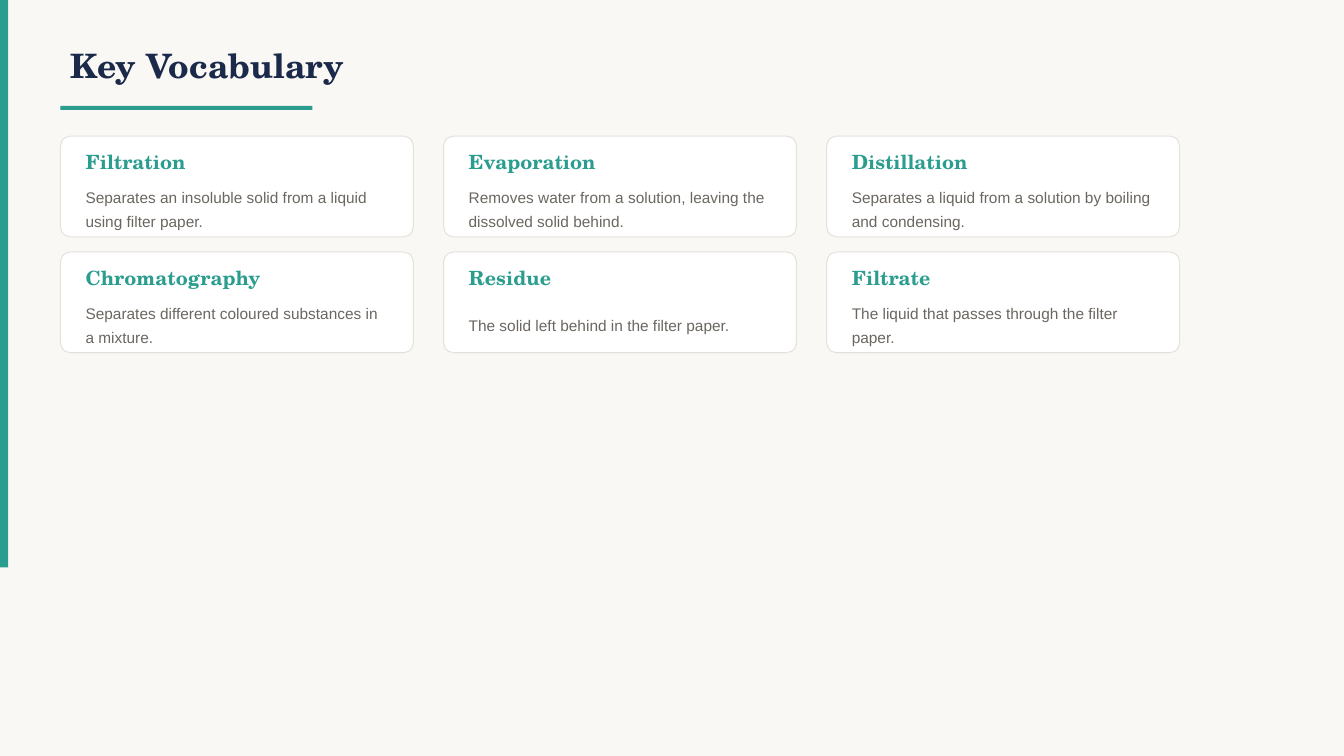
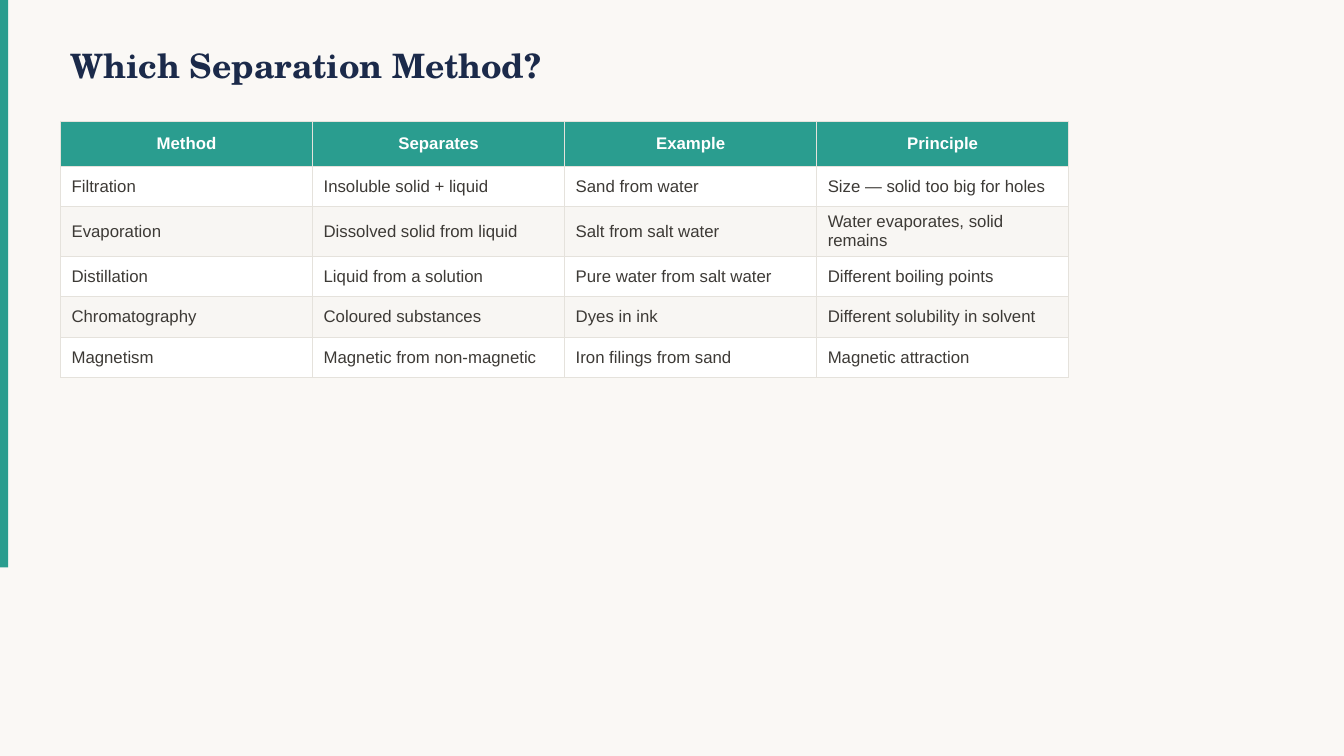
"""Build two science slides: a vocabulary card grid and a separation methods table."""
from pptx import Presentation
from pptx.dml.color import RGBColor
from pptx.enum.shapes import MSO_SHAPE as SHAPE
from pptx.enum.text import MSO_ANCHOR as ANCHOR, MSO_AUTO_SIZE as AUTOSIZE, PP_ALIGN as ALIGN
from pptx.oxml.ns import qn
from pptx.util import Pt
from lxml.etree import SubElement

VOCABULARY = [
    ("Filtration", "Separates an insoluble solid from a liquid using filter paper."),
    ("Evaporation", "Removes water from a solution, leaving the dissolved solid behind."),
    ("Distillation", "Separates a liquid from a solution by boiling and condensing."),
    ("Chromatography", "Separates different coloured substances in a mixture."),
    ("Residue", "The solid left behind in the filter paper."),
    ("Filtrate", "The liquid that passes through the filter paper."),
]
METHODS = [
    ("Method", "Separates", "Example", "Principle"),
    ("Filtration", "Insoluble solid + liquid", "Sand from water", "Size — solid too big for holes"),
    ("Evaporation", "Dissolved solid from liquid", "Salt from salt water",
     "Water evaporates, solid remains"),
    ("Distillation", "Liquid from a solution", "Pure water from salt water",
     "Different boiling points"),
    ("Chromatography", "Coloured substances", "Dyes in ink", "Different solubility in solvent"),
    ("Magnetism", "Magnetic from non-magnetic", "Iron filings from sand", "Magnetic attraction"),
]

COLORS = {
    "paper": "FAF8F5", "accent": "2A9D8F", "title": "1B2A4A", "card": "FFFFFF",
    "border": "E5E2DC", "muted": "6B6660", "body": "3D3A36", "band": "F8F6F3",
}
SERIF, SANS = "TeX Gyre Schola", "Arial"
PX = 9144
MARGIN = 60
CARD_COLUMNS, CARD_TOP, CARD_WIDTH, CARD_HEIGHT = 3, 135, 350, 100
GAP_X, GAP_Y = 30, 15
TABLE_TOP, COLUMN_WIDTH, HEADER_HEIGHT, ROW_HEIGHT = 120, 250, 45, 40


def px(*lengths):
    return [length * PX for length in lengths]


def rgb(name):
    return RGBColor.from_string(COLORS[name])


def paint(target, name):
    target.fill.solid()
    target.fill.fore_color.rgb = rgb(name)


def style(paragraph, face, size, color, bold=False, align=ALIGN.LEFT):
    paragraph.alignment = align
    font = paragraph.font
    font.name, font.size, font.bold = face, Pt(size), bold
    font.color.rgb = rgb(color)


def add_block(slide, box, color, preset=SHAPE.RECTANGLE):
    block = slide.shapes.add_shape(preset, *px(*box))
    block.shadow.inherit = False
    paint(block, color)
    block.line.fill.background()
    return block


def add_text(slide, box, text, *look):
    frame = slide.shapes.add_textbox(*px(*box)).text_frame
    frame.word_wrap = True
    frame.vertical_anchor = ANCHOR.MIDDLE
    frame.text = text
    paragraph = frame.paragraphs[0]
    style(paragraph, *look)
    return paragraph


def add_titled_slide(deck, heading):
    slide = deck.slides.add_slide(deck.slide_layouts.get_by_name("Title Only"))
    title = slide.shapes.title
    title.left, title.top, title.width, title.height = px(MARGIN, 30, 1000, 70)
    title.text = heading
    title.text_frame.auto_size = AUTOSIZE.NONE
    title.text_frame.vertical_anchor = ANCHOR.MIDDLE
    style(title.text_frame.paragraphs[0], SERIF, 24, "title", True)
    add_block(slide, (0, 0, 8, 563), "accent")
    return slide


def add_card(slide, left, top, term, meaning):
    card = add_block(slide, (left, top, CARD_WIDTH, CARD_HEIGHT), "card", SHAPE.ROUNDED_RECTANGLE)
    card.adjustments[0] = 0.1
    card.line.color.rgb = rgb("border")
    card.line.width = Pt(0.75)
    text_left, text_width = left + 15, CARD_WIDTH - 30
    add_text(slide, (text_left, top + 8, text_width, 35), term, SERIF, 14, "accent", True)
    definition = add_text(slide, (text_left, top + 45, text_width, 50), meaning, SANS, 11, "muted")
    definition.line_spacing = 1.3


def add_borders(cell):
    properties = cell._tc.get_or_add_tcPr()
    for side in ("a:lnL", "a:lnR", "a:lnT", "a:lnB"):
        edge = SubElement(properties, qn(side), w=str(Pt(0.5)))
        SubElement(SubElement(edge, qn("a:solidFill")), qn("a:srgbClr"), val=COLORS["border"])


def fill_cell(cell, text, background, *look):
    add_borders(cell)
    paint(cell, background)
    cell.margin_left = cell.margin_right = 11 * PX
    cell.margin_top = cell.margin_bottom = 6 * PX
    cell.vertical_anchor = ANCHOR.MIDDLE
    cell.text = text
    style(cell.text_frame.paragraphs[0], SANS, 12, *look)


def build_vocabulary(deck):
    slide = add_titled_slide(deck, "Key Vocabulary")
    add_block(slide, (MARGIN, 105, 250, 4), "accent")
    for index, (term, meaning) in enumerate(VOCABULARY):
        row, column = divmod(index, CARD_COLUMNS)
        left = MARGIN + column * (CARD_WIDTH + GAP_X)
        top = CARD_TOP + row * (CARD_HEIGHT + GAP_Y)
        add_card(slide, left, top, term, meaning)


def build_methods(deck):
    slide = add_titled_slide(deck, "Which Separation Method?")
    rows, columns = len(METHODS), len(METHODS[0])
    height = HEADER_HEIGHT + (rows - 1) * ROW_HEIGHT
    box = px(MARGIN, TABLE_TOP, columns * COLUMN_WIDTH, height)
    methods = slide.shapes.add_table(rows, columns, *box).table
    for r, entries in enumerate(METHODS):
        methods.rows[r].height = (ROW_HEIGHT if r else HEADER_HEIGHT) * PX
        if r == 0:
            look = ("accent", "card", True, ALIGN.CENTER)
        else:
            look = ("card" if r % 2 else "band", "body")
        for c, entry in enumerate(entries):
            fill_cell(methods.cell(r, c), entry, *look)


def main():
    deck = Presentation()
    deck.slide_width, deck.slide_height = px(1333, 750)
    paint(deck.slide_master.background, "paper")
    build_vocabulary(deck)
    build_methods(deck)
    deck.save("out.pptx")


if __name__ == "__main__":
    main()
